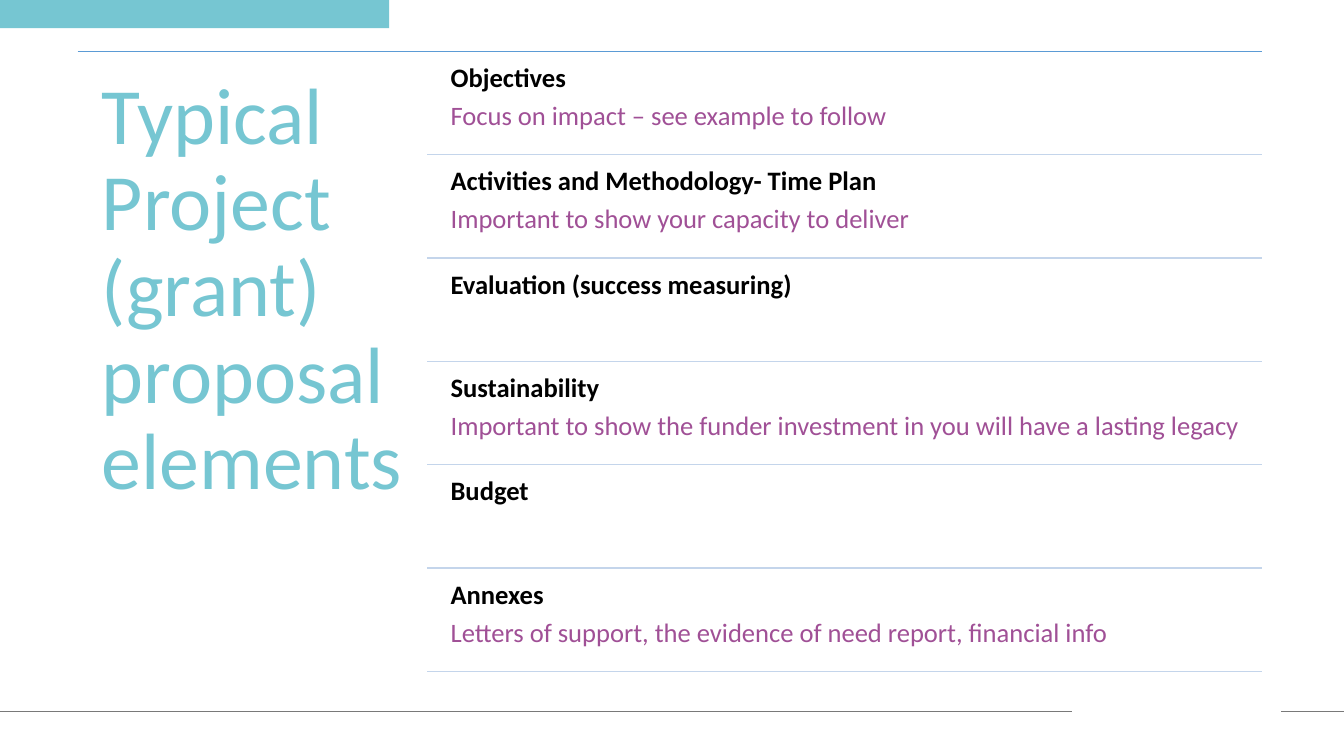
from lxml import etree
from pptx import Presentation
from pptx.dml.color import RGBColor
from pptx.enum.shapes import MSO_CONNECTOR, MSO_SHAPE
from pptx.enum.text import MSO_ANCHOR, PP_ALIGN
from pptx.oxml.ns import qn
from pptx.util import Inches, Pt

STRAIGHT = MSO_CONNECTOR.STRAIGHT
RECTANGLE = MSO_SHAPE.RECTANGLE
TOP = MSO_ANCHOR.TOP
LEFT = PP_ALIGN.LEFT

WIDTH, HEIGHT = 13.33, 7.5
FONT = "Calibri"
TEAL, PURPLE, BLACK = "76C6D2", "A05096", "000000"
BLUE, PALE_BLUE, GREY = "5B9BD5", "C4D5EB", "797979"

ELEMENTS = [
    ("Objectives", "Focus on impact – see example to follow"),
    ("Activities and Methodology- Time Plan", "Important to show your capacity to deliver"),
    ("Evaluation (success measuring)",),
    ("Sustainability",
     "Important to show the funder investment in you will have a lasting legacy"),
    ("Budget",),
    ("Annexes", "Letters of support, the evidence of need report, financial info"),
]


def colour(hex_code):
    """Turn a hex string into a colour."""
    return RGBColor.from_string(hex_code)


def add_rule(slide, left, right, y, hex_code, weight):
    """Draw a horizontal rule without shadow."""
    rule = slide.shapes.add_connector(
        STRAIGHT, Inches(left), Inches(y), Inches(right), Inches(y))
    rule.line.color.rgb = colour(hex_code)
    rule.line.width = Pt(weight)
    etree.SubElement(rule._element.spPr, qn("a:effectLst"))


def add_text(slide, box, inset, lines, size):
    """Write (text, colour, bold) lines into a box, one paragraph each."""
    frame = slide.shapes.add_textbox(*map(Inches, box)).text_frame
    frame.word_wrap = True
    frame.vertical_anchor = TOP
    frame.margin_left = frame.margin_right = Inches(inset)
    frame.margin_top = frame.margin_bottom = Inches(inset)
    frame.text = "\n".join(text for text, _, _ in lines)
    for paragraph, (_, hex_code, bold) in zip(frame.paragraphs, lines):
        paragraph.alignment = LEFT
        paragraph.line_spacing = 0.9
        paragraph.space_after = Pt(size * 0.35)
        font = paragraph.runs[0].font
        font.name, font.size, font.bold = FONT, Pt(size), bold
        font.color.rgb = colour(hex_code)


def add_frame(slide, width, height):
    """Draw the corner band and the split footer rule."""
    band = slide.shapes.add_shape(RECTANGLE, 0, 0, Inches(3.86), Inches(0.28))
    band.shadow.inherit = False
    band.fill.solid()
    band.fill.fore_color.rgb = colour(TEAL)
    band.line.fill.background()
    footer_y = height - 0.44
    for left, right in ((0, width - 2.7), (width - 0.62, width)):
        add_rule(slide, left, right, footer_y, GREY, 0.5)


def add_title(slide, left, top, width, height):
    """Set the large heading in its column."""
    title = "Typical Project (grant) proposal elements"
    add_text(slide, (left, top, width, height), 0.24, [(title, TEAL, False)], 57)


def add_elements(slide, left, top, width, height):
    """Stack the proposal elements in equal rows, each closed by a rule."""
    row_height = height / len(ELEMENTS)
    indent, gap = 0.15, 0.05
    for index, (heading, *advice) in enumerate(ELEMENTS):
        row_top = top + index * row_height
        lines = [(heading, BLACK, True)] + [(text, PURPLE, False) for text in advice]
        box = (left + indent, row_top + gap, width - indent, row_height - gap)
        add_text(slide, box, 0.08, lines, 19)
        add_rule(slide, left, left + width, row_top + row_height, PALE_BLUE, 1)


def main():
    """Build and save the slide."""
    deck = Presentation()
    deck.slide_width, deck.slide_height = Inches(WIDTH), Inches(HEIGHT)
    slide = deck.slides.add_slide(deck.slide_layouts[6])
    left, top, right, body_height = 0.77, 0.51, 12.52, 6.15
    title_width = 3.47
    elements_left = left + title_width
    add_frame(slide, WIDTH, HEIGHT)
    add_rule(slide, left, right, top, BLUE, 1)
    add_title(slide, left, top, title_width, body_height)
    add_elements(slide, elements_left, top, right - elements_left, body_height)
    deck.save("out.pptx")


if __name__ == "__main__":
    main()
